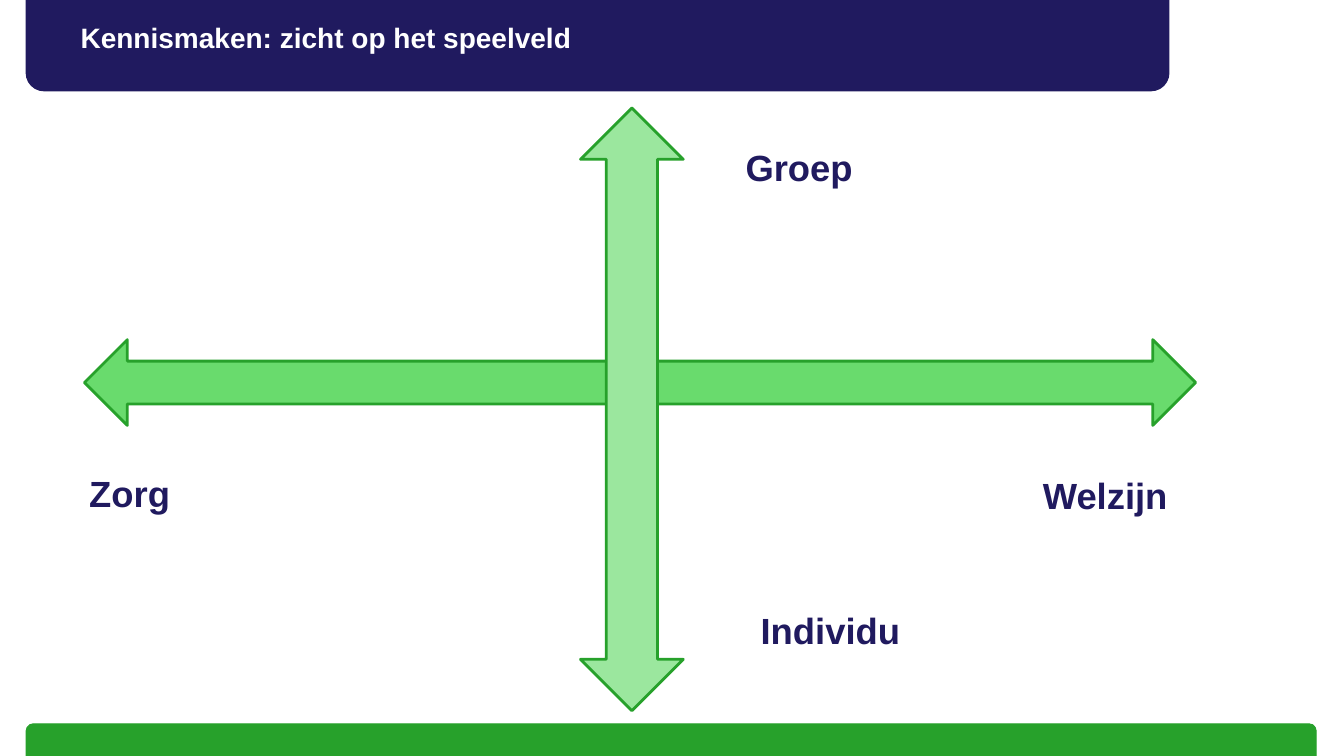
import pptx
import pptx.util
import pptx.dml.color
import pptx.enum.shapes
import pptx.enum.text

Cm = pptx.util.Cm
Pt = pptx.util.Pt
RGBColor = pptx.dml.color.RGBColor
SHAPE = pptx.enum.shapes.MSO_SHAPE

NAVY = RGBColor(0x20, 0x1A, 0x5F)
GREEN = RGBColor(0x27, 0xA1, 0x2B)
MID_GREEN = RGBColor(0x69, 0xDB, 0x6D)
LIGHT_GREEN = RGBColor(0x9B, 0xE7, 0x9E)
WHITE = RGBColor(0xFF, 0xFF, 0xFF)


def add_filled_shape(slide, kind, box, fill, line, line_width):
    """Draw a preset shape; box is left, top, width, height in cm."""
    shape = slide.shapes.add_shape(kind, *map(Cm, box))
    shape.shadow.inherit = False
    shape.fill.solid()
    shape.fill.fore_color.rgb = fill
    shape.line.color.rgb = line
    shape.line.width = Pt(line_width)


def format_text(frame, text, size, color):
    frame.text = text
    para = frame.paragraphs[0]
    para.alignment = pptx.enum.text.PP_ALIGN.LEFT
    font = para.runs[0].font
    font.name = "Arial"
    font.size = Pt(size)
    font.bold = True
    font.color.rgb = color


def add_label(slide, text, box):
    frame = slide.shapes.add_textbox(*map(Cm, box)).text_frame
    frame.word_wrap = True
    frame.auto_size = pptx.enum.text.MSO_AUTO_SIZE.SHAPE_TO_FIT_TEXT
    format_text(frame, text, 26, NAVY)


def add_header(slide, box):
    left, top, width, height = box
    add_filled_shape(slide, SHAPE.ROUNDED_RECTANGLE, box, NAVY, NAVY, 0.75)
    title = slide.shapes.title
    title.left, title.top = Cm(left + 1.37), Cm(top + 0.94)
    title.width, title.height = Cm(width - 2), Cm(1)
    frame = title.text_frame
    frame.margin_left = frame.margin_top = 0
    frame.margin_right = frame.margin_bottom = 0
    frame.vertical_anchor = pptx.enum.text.MSO_ANCHOR.TOP
    format_text(frame, "Kennismaken: zicht op het speelveld", 20, WHITE)
    # The title has to lie in front of its band.
    title.element.getparent().append(title.element)


def add_footer(slide, box):
    add_filled_shape(slide, SHAPE.ROUNDED_RECTANGLE, box, GREEN, GREEN, 0.75)


def add_playing_field(slide, box):
    """Cross two double arrows in the box and label their four ends."""
    left, top, width, height = box
    add_filled_shape(slide, SHAPE.LEFT_RIGHT_ARROW,
                     (left, top + 5.84, width, 2.16), MID_GREEN, GREEN, 2)
    add_filled_shape(slide, SHAPE.UP_DOWN_ARROW,
                     (left + 12.5, top, 2.59, height), LIGHT_GREEN, GREEN, 2)
    labels = (
        ("Zorg", -0.13, 9.02, 5.54),
        ("Welzijn", 23.9, 9.07, 5.54),
        ("Groep", 16.41, 0.81, 3.25),
        ("Individu", 16.79, 12.47, 4.06),
    )
    for text, across, down, label_width in labels:
        add_label(slide, text, (left + across, top + down, label_width, 1.37))


def main():
    deck = pptx.Presentation()
    deck.slide_width, deck.slide_height = Cm(33.87), Cm(19.05)
    slide = deck.slides.add_slide(deck.slide_layouts[5])
    add_footer(slide, (0.66, 18.24, 32.51, 1.09))
    add_header(slide, (0.66, -0.43, 28.8, 2.72))
    add_playing_field(slide, (2.13, 2.72, 28, 15.19))
    deck.save("out.pptx")


if __name__ == "__main__":
    main()
